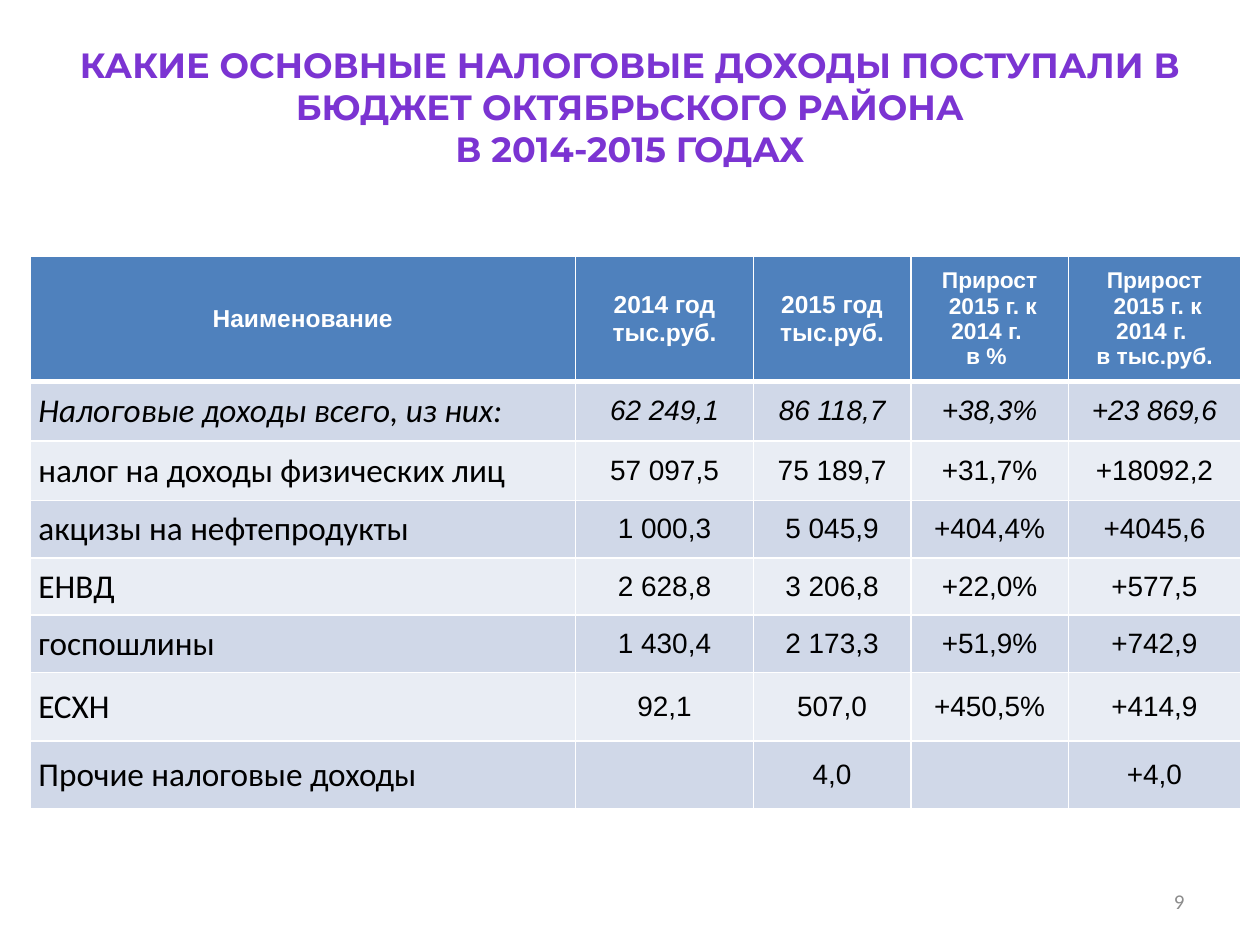
from lxml import etree
from pptx import Presentation
from pptx.dml.color import RGBColor
from pptx.enum.text import MSO_ANCHOR, MSO_AUTO_SIZE, PP_ALIGN
from pptx.oxml import parse_xml
from pptx.oxml.ns import nsdecls, qn
from pptx.util import Pt

CENTER, LEFT, RIGHT = PP_ALIGN.CENTER, PP_ALIGN.LEFT, PP_ALIGN.RIGHT
TOP, MIDDLE = MSO_ANCHOR.TOP, MSO_ANCHOR.MIDDLE
GROW = MSO_AUTO_SIZE.SHAPE_TO_FIT_TEXT

# Content
TITLE = ("КАКИЕ ОСНОВНЫЕ НАЛОГОВЫЕ ДОХОДЫ ПОСТУПАЛИ В БЮДЖЕТ ОКТЯБРЬСКОГО РАЙОНА\v"
         "В 2014-2015 ГОДАХ")
PAGE_NUMBER = "9"
HEADER = [
    "Наименование",
    "2014 год\nтыс.руб.",
    "2015 год\nтыс.руб.",
    "Прирост\n 2015 г. к 2014 г. \nв % ",
    "Прирост\n 2015 г. к 2014 г. \nв тыс.руб.",
]
INCOME = [
    ("Налоговые доходы всего, из них:", "62 249,1", "86 118,7", "+38,3%", "+23 869,6"),
    ("налог на доходы физических лиц", "57 097,5", "75 189,7", "+31,7%", "+18092,2"),
    ("акцизы на нефтепродукты", "1 000,3", "5 045,9", "+404,4%", "+4045,6"),
    ("ЕНВД", "2 628,8", "3 206,8", "+22,0%", "+577,5"),
    ("госпошлины", "1 430,4", "2 173,3", "+51,9%", "+742,9"),
    ("ЕСХН", "92,1", "507,0", "+450,5%", "+414,9"),
    ("Прочие налоговые доходы", "", "4,0", "", "+4,0"),
]
COLUMN_WIDTHS = [312, 101.5, 90, 90, 98.5]
ROW_HEIGHTS = [71.5, 34, 34, 32.4, 32.4, 32.4, 39, 39]

# Style
HEADER_FILL, BANDS = "4F81BD", ["D0D8E8", "E9EDF4"]
WHITE, BLACK, GREY = "FFFFFF", "000000", "8C8C8C"
TITLE_OUTLINE = "5E457C"
TITLE_STOPS = [(0, "3D1B67"), (43, "7B34D2"), (48, "7330C4"), (100, "3D1B67")]


def color(hex_text):
    return RGBColor.from_string(hex_text)


def format_text(frame, font, size, hex_text, align, bold=False, italic=False):
    for paragraph in frame.paragraphs:
        paragraph.alignment = align
        for span in paragraph.runs:
            span.font.name, span.font.size = font, Pt(size)
            span.font.bold, span.font.italic = bold, italic
            span.font.color.rgb = color(hex_text)


def add_gradient_outline(span):
    """Replace the solid fill with an outlined vertical gradient."""
    properties = span.font._element
    properties.remove(properties.find(qn("a:solidFill")))
    stops = "".join(f'<a:gs pos="{position * 1000}"><a:srgbClr val="{hex_text}"/></a:gs>'
                    for position, hex_text in TITLE_STOPS)
    outline = (f'<a:ln {nsdecls("a")} w="{Pt(0.71)}"><a:solidFill>'
               f'<a:srgbClr val="{TITLE_OUTLINE}"/></a:solidFill></a:ln>')
    gradient = (f'<a:gradFill {nsdecls("a")}><a:gsLst>{stops}</a:gsLst>'
                '<a:lin ang="5400000"/></a:gradFill>')
    properties.insert(0, parse_xml(outline))
    properties.insert(1, parse_xml(gradient))


def set_borders(cell, top, bottom):
    properties = cell._tc.get_or_add_tcPr()
    widths = {"lnL": 1, "lnR": 1, "lnT": top, "lnB": bottom}
    for index, (side, width) in enumerate(widths.items()):
        line = etree.Element(qn(f"a:{side}"), w=str(Pt(width)))
        fill = etree.SubElement(line, qn("a:solidFill"))
        etree.SubElement(fill, qn("a:srgbClr"), val=WHITE)
        properties.insert(index, line)


deck = Presentation()
deck.slide_width, deck.slide_height = Pt(720), Pt(540)
page = deck.slides.add_slide(deck.slide_layouts[5])

# Title
title = page.shapes.title
title.left, title.top, title.width, title.height = Pt(0), Pt(21), Pt(720), Pt(80)
frame = title.text_frame
frame.text = TITLE
frame.word_wrap, frame.vertical_anchor, frame.auto_size = True, TOP, GROW
format_text(frame, "Montserrat", 20, "7B34D2", CENTER, bold=True)
for span in frame.paragraphs[0].runs:
    add_gradient_outline(span)

# Income table
rows = [HEADER, *INCOME]
table = page.shapes.add_table(len(rows), len(HEADER), Pt(17), Pt(146.5),
                              Pt(sum(COLUMN_WIDTHS)), Pt(sum(ROW_HEIGHTS))).table
for column, width in zip(table.columns, COLUMN_WIDTHS):
    column.width = Pt(width)
for row, height in zip(table.rows, ROW_HEIGHTS):
    row.height = Pt(height)

for r, texts in enumerate(rows):
    for c, text in enumerate(texts):
        cell = table.cell(r, c)
        cell.text_frame.text = text
        cell.vertical_anchor = MIDDLE
        cell.fill.solid()
        cell.fill.fore_color.rgb = color(BANDS[(r - 1) % 2] if r else HEADER_FILL)
        set_borders(cell, top=3 if r == 1 else 1, bottom=3 if r == 0 else 1)
        if r == 0:
            format_text(cell.text_frame, "Arial", 14 if c < 3 else 13, WHITE, CENTER, bold=True)
        elif c == 0:
            cell.margin_left = cell.margin_right = Pt(5)
            cell.margin_top = cell.margin_bottom = Pt(5)
            format_text(cell.text_frame, "Calibri", 19, BLACK, LEFT, italic=r == 1)
        else:
            format_text(cell.text_frame, "Arial", 16, BLACK, CENTER, italic=r == 1)

# Page number
number = page.shapes.add_textbox(Pt(516), Pt(500.5), Pt(168), Pt(28.75))
number.text_frame.text = PAGE_NUMBER
number.text_frame.word_wrap = True
number.text_frame.vertical_anchor = MIDDLE
format_text(number.text_frame, "Calibri", 12, GREY, RIGHT)

deck.save("out.pptx")
